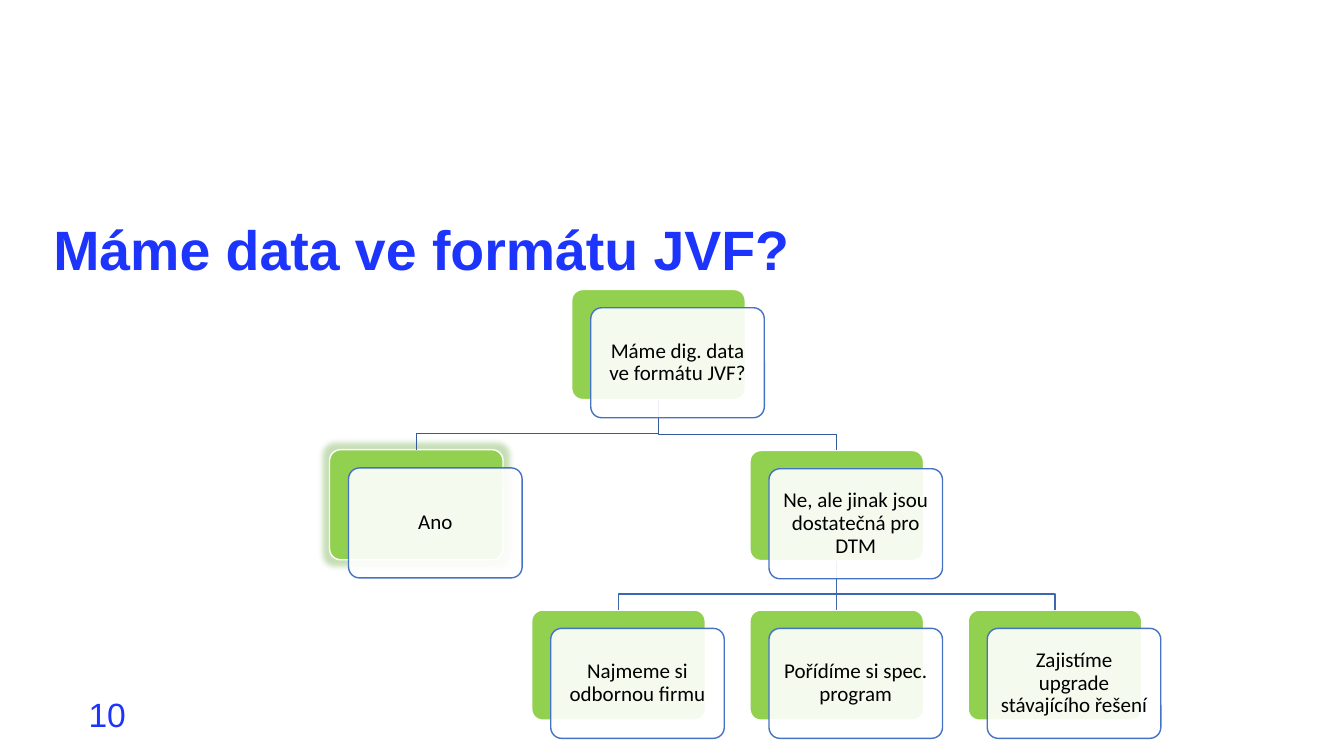
from lxml import etree
from pptx import Presentation
from pptx.dml.color import RGBColor
from pptx.enum.shapes import MSO_CONNECTOR, MSO_SHAPE
from pptx.enum.text import MSO_ANCHOR, PP_ALIGN
from pptx.oxml.ns import qn
from pptx.util import Pt

ROUND = MSO_SHAPE.ROUNDED_RECTANGLE
STRAIGHT = MSO_CONNECTOR.STRAIGHT
MIDDLE = MSO_ANCHOR.MIDDLE
LEFT, CENTER = PP_ALIGN.LEFT, PP_ALIGN.CENTER

WIDE, HIGH = 124, 78.6
SHIFT = 13.6, 13
TURN = 11.5
STEP = 155.9
NO_X, LOW_Y = 535.7, 435.8
NODES = {
    "root": ("Máme dig. data ve formátu JVF?", 408.4, 206.8),
    "yes": ("Ano", 235.4, 321.2),
    "no": ("Ne, ale jinak jsou dostatečná pro DTM", NO_X, 321.8),
    "hire": ("Najmeme si odbornou firmu", NO_X - STEP, LOW_Y),
    "buy": ("Pořídíme si spec. program", NO_X, LOW_Y),
    "grow": ("Zajistíme upgrade stávajícího řešení", NO_X + STEP, LOW_Y),
}
BENDS = [("no", "grow", "3E67B2"), ("no", "hire", "3E67B2"),
         ("root", "no", "365B9D"), ("root", "yes", "365B9D")]


def color(code):
    """Turn a hex string into a colour."""
    return RGBColor.from_string(code)


def write(shape, text, size, font, code, align=LEFT, bold=False, inset=7.2):
    """Set and format the text of a shape."""
    frame = shape.text_frame
    frame.word_wrap = True
    frame.vertical_anchor = MIDDLE
    frame.margin_left = frame.margin_right = Pt(inset)
    frame.margin_top = frame.margin_bottom = Pt(min(inset, 3.6))
    frame.text = text
    para = frame.paragraphs[0]
    para.alignment = align
    para.line_spacing = 0.9
    for run in para.runs:
        run.font.size = Pt(size)
        run.font.name = font
        run.font.bold = bold
        run.font.color.rgb = color(code)


def add_label(slide, text, left, top, width, height, size, bold=False):
    """Add a blue text box."""
    box = slide.shapes.add_textbox(Pt(left), Pt(top), Pt(width), Pt(height))
    write(box, text, size, "Arial", "1D34FD", bold=bold)


def add_card(slide, left, top, fill, line):
    """Add a rounded card."""
    card = slide.shapes.add_shape(ROUND, Pt(left), Pt(top), Pt(WIDE), Pt(HIGH))
    card.adjustments[0] = 0.1
    card.shadow.inherit = False
    card.fill.solid()
    card.fill.fore_color.rgb = color(fill)
    card.line.color.rgb = color(line)
    card.line.width = Pt(1)
    return card


def add_alpha(tone, share):
    """Make a colour element partly transparent."""
    etree.SubElement(tone, qn("a:alpha"), val=str(share * 1000))


def add_glow(card):
    """Put a soft green glow around a card."""
    effects = card.element.spPr.find(qn("a:effectLst"))
    glow = etree.SubElement(effects, qn("a:glow"), rad=str(Pt(8)))
    add_alpha(etree.SubElement(glow, qn("a:srgbClr"), val="70AD47"), 40)


def add_front(slide, text, left, top):
    """Add the shifted white card that holds the text."""
    card = add_card(slide, left + SHIFT[0], top + SHIFT[1], "FFFFFF", "4472C4")
    tone = card.element.spPr.find(qn("a:solidFill")).find(qn("a:srgbClr"))
    add_alpha(tone, 90)
    write(card, text, 15, "Calibri", "000000", CENTER, inset=6.5)


def add_bend(slide, start, end, code):
    """Draw a bent line from one node down to another."""
    x, y = NODES[start][1] + WIDE / 2, NODES[start][2] + HIGH
    to_x, to_y = NODES[end][1] + WIDE / 2, NODES[end][2]
    spots = [(x, to_y - TURN), (to_x, to_y - TURN), (to_x, to_y)]
    pen = slide.shapes.build_freeform(Pt(x), Pt(y))
    pen.add_line_segments([(Pt(a), Pt(b)) for a, b in spots], close=False)
    bend = pen.convert_to_shape()
    bend.shadow.inherit = False
    bend.fill.background()
    bend.line.color.rgb = color(code)
    bend.line.width = Pt(1)


def add_link(slide, upper, lower, code):
    """Join two cards with a straight line."""
    link = slide.shapes.add_connector(STRAIGHT, 0, 0, 0, 0)
    link.begin_connect(upper, 2)
    link.end_connect(lower, 0)
    link.line.color.rgb = color(code)
    link.line.width = Pt(1)
    etree.SubElement(link.element.spPr, qn("a:effectLst"))


def main():
    """Build and save the slide."""
    deck = Presentation()
    deck.slide_width, deck.slide_height = Pt(960), Pt(540)
    slide = deck.slides.add_slide(deck.slide_layouts[6])
    add_label(slide, "10", 56.2, 497.5, 216, 28.8, 24)
    add_label(slide, "Máme data ve formátu JVF?", 31, 154, 861, 52.6, 39.6, True)
    backs = {key: add_card(slide, left, top, "92D050", "FFFFFF")
             for key, (text, left, top) in NODES.items()}
    add_glow(backs["yes"])
    for start, end, code in BENDS:
        add_bend(slide, start, end, code)
    add_link(slide, backs["no"], backs["buy"], "3E67B2")
    for text, left, top in NODES.values():
        add_front(slide, text, left, top)
    deck.save("out.pptx")


if __name__ == "__main__":
    main()
